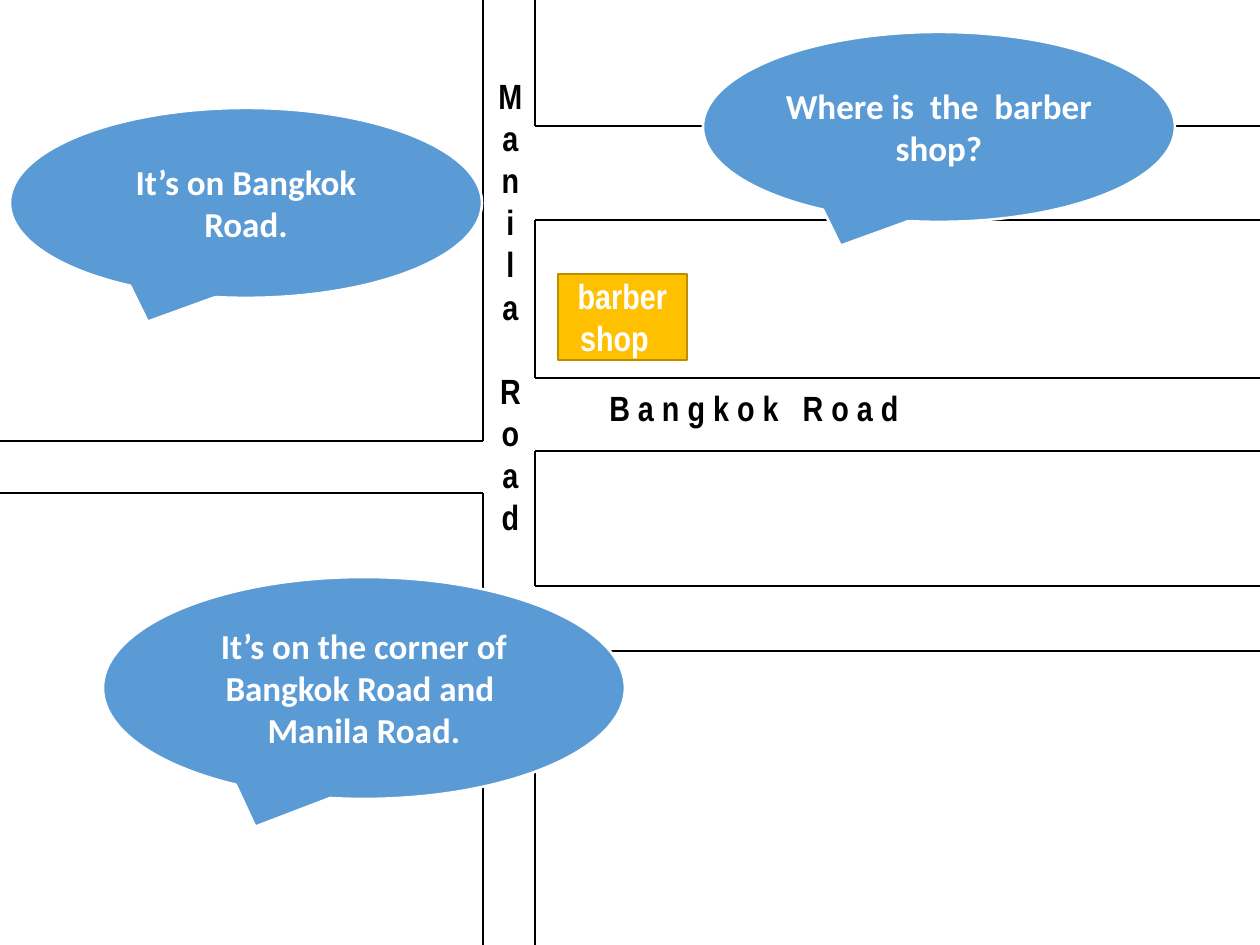
from pptx import Presentation
from pptx.dml.color import RGBColor
from pptx.enum.shapes import MSO_CONNECTOR, MSO_SHAPE
from pptx.enum.text import MSO_ANCHOR, MSO_AUTO_SIZE, PP_ALIGN
from pptx.oxml.ns import qn
from pptx.util import Pt
from lxml import etree

LINE = MSO_CONNECTOR.STRAIGHT
BUBBLE, RECT = MSO_SHAPE.OVAL_CALLOUT, MSO_SHAPE.RECTANGLE
MIDDLE, TOP = MSO_ANCHOR.MIDDLE, MSO_ANCHOR.TOP
CENTER = PP_ALIGN.CENTER
GROW = MSO_AUTO_SIZE.SHAPE_TO_FIT_TEXT

PX = 914400 // 126
WIDE, HIGH = 1260, 945
THEME = {
    "blue": "5B9BD5", "gold": "FFC000", "edge": "BD8E00",
    "white": "FFFFFF", "black": "000000",
    "talk": "Calibri", "sign": "Arial Narrow", "size": 20,
}

# Kerbs: the main road runs between WEST and EAST
WEST, EAST = 483, 535
KERBS = [
    (WEST, HIGH, WEST, 588), (EAST, 651, EAST, HIGH),
    (EAST, 651, WIDE, 651), (EAST, 586, WIDE, 586),
    (EAST, 586, EAST, 451), (EAST, 451, WIDE, 451),
    (EAST, 378, WIDE, 378), (WEST, 588, WEST, 493),
    (WEST, 493, 0, 493), (WEST, 441, 0, 441),
    (WEST, 441, WEST, 0), (EAST, 378, EAST, 220),
    (EAST, 220, WIDE, 220), (EAST, 126, WIDE, 126),
    (EAST, 126, EAST, 0),
]

# Speech bubbles and the shop: place, lines of text
ASK = ((703, 32, 472, 190), ["Where is  the  barber shop?"])
CORNER = ((103, 577, 522, 222),
          ["It’s on the corner of Bangkok Road and ", "Manila Road."])
REPLY = ((10, 108, 472, 190), ["It’s on Bangkok Road."])
SHOP = ((558, 274, 129, 86), ["barber", "shop  "])

# Road names: place, text, text direction, turn
ROADS = [
    ((474, 35, 73, 542), "Manila Road", "wordArtVert", 0),
    ((724, 281, 68, 267), "B a n g k o k   R o a d ", "vert", 270),
]

deck = Presentation()
deck.slide_width, deck.slide_height = WIDE * PX, HIGH * PX
slide = deck.slides.add_slide(deck.slide_layouts[6])
shapes = slide.shapes


def emu(nums):
    return [n * PX for n in nums]


def color(name):
    return RGBColor.from_string(THEME[name])


def write(frame, lines, face, ink, anchor):
    frame.vertical_anchor = anchor
    for i, line in enumerate(lines):
        para = frame.paragraphs[0] if i == 0 else frame.add_paragraph()
        para.alignment = CENTER
        run = para.add_run()
        run.text = line
        font = run.font
        font.name, font.size, font.bold = THEME[face], Pt(THEME["size"]), True
        font.color.rgb = color(ink)


def block(kind, item, fill, edge, width, face):
    place, lines = item
    shape = shapes.add_shape(kind, *emu(place))
    shape.shadow.inherit = False
    shape.fill.solid()
    shape.fill.fore_color.rgb = color(fill)
    shape.line.color.rgb = color(edge)
    shape.line.width = Pt(width)
    shape.text_frame.word_wrap = True
    write(shape.text_frame, lines, face, "white", MIDDLE)


def bubble(item):
    block(BUBBLE, item, "blue", "white", 1.5, "talk")


# Streets
for ends in KERBS:
    kerb = shapes.add_connector(LINE, *emu(ends))
    kerb.line.color.rgb = color("black")
    kerb.line.width = Pt(0.75)
    etree.SubElement(kerb.element.spPr, qn("a:effectLst"))

# Bubbles and shop
bubble(ASK)
bubble(CORNER)
block(RECT, SHOP, "gold", "edge", 1, "sign")

# Road names
for place, text, way, turn in ROADS:
    box = shapes.add_textbox(*emu(place))
    box.rotation = turn
    frame = box.text_frame
    frame.word_wrap = False
    frame.auto_size = GROW
    write(frame, [text], "sign", "black", TOP)
    box.element.txBody.find(qn("a:bodyPr")).set("vert", way)

bubble(REPLY)

deck.save("out.pptx")
